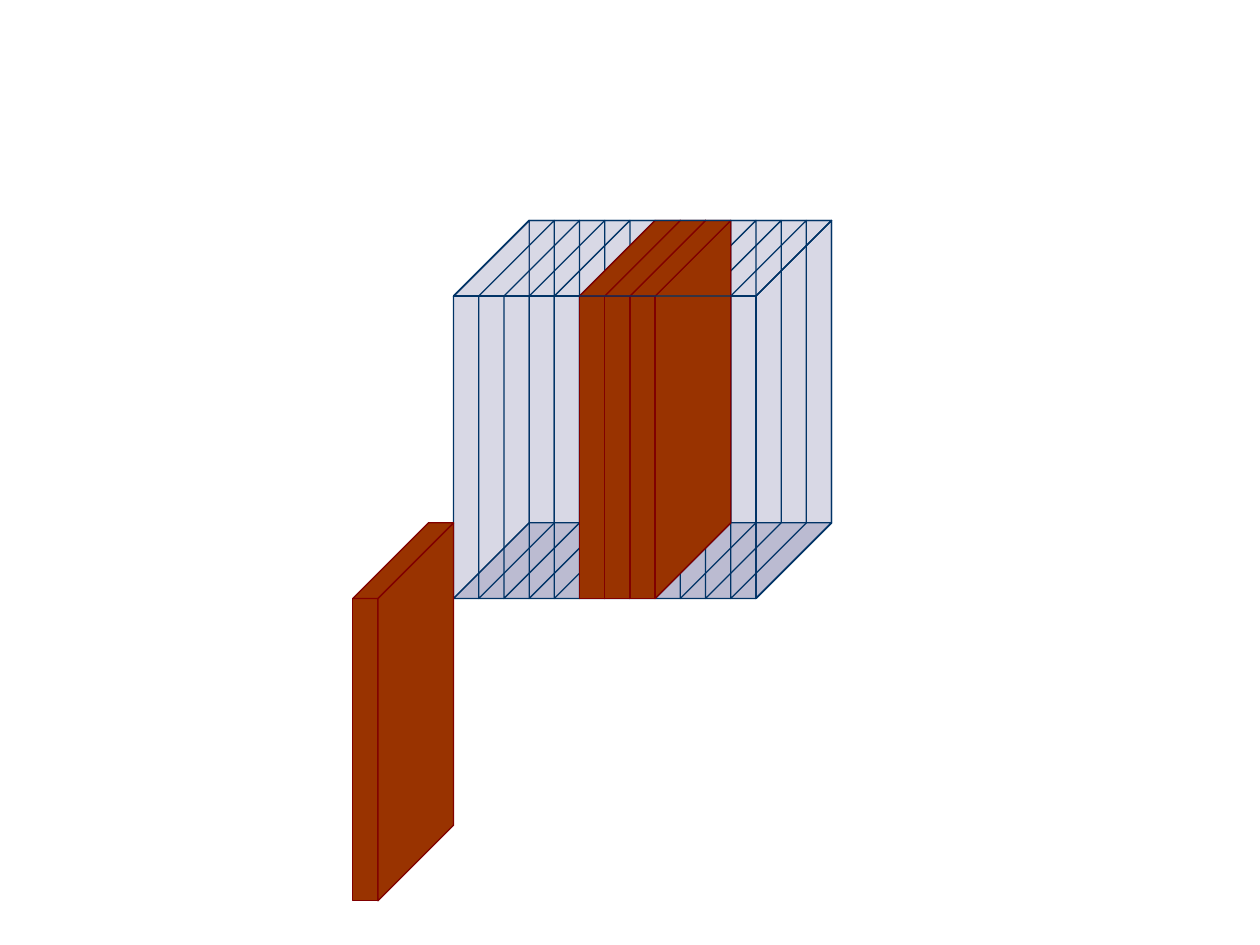
from dataclasses import dataclass

from lxml.etree import SubElement
from pptx import Presentation
from pptx.dml.color import RGBColor as Rgb
from pptx.enum.shapes import MSO_SHAPE as Shape
from pptx.oxml.ns import qn
from pptx.util import Emu, Pt

PX = 9144  # EMU per px, 100 px to the inch


@dataclass(frozen=True)
class Theme:
    glass: Rgb = Rgb.from_string("666699")
    glass_edge: Rgb = Rgb.from_string("003366")
    slab: Rgb = Rgb.from_string("993300")
    slab_edge: Rgb = Rgb.from_string("800000")
    glass_alpha: int = 25
    edge_width: float = 0.75


THEME = Theme()

SIDE = 240    # front edge of the cube
DEPTH = 60    # shift of the back face, right and up
SLICE = 20    # thickness of one slab
CUBE_X, CUBE_Y = 360, 235
FRONT_SLABS = (460, 480, 500)
LOOSE_X, LOOSE_Y = 280, 475


def paint(shape, edge, fill=None, alpha=None):
    """Set line and fill; alpha is the opacity in percent."""
    shape.shadow.inherit = False
    shape.line.color.rgb = edge
    shape.line.width = Pt(THEME.edge_width)
    if fill is None:
        shape.fill.background()
        return
    shape.fill.solid()
    shape.fill.fore_color.rgb = fill
    if alpha is not None:
        color = shape.fill._xPr.find(qn("a:solidFill"))[0]
        SubElement(color, qn("a:alpha"), val=str(alpha * 1000))


def add_polygon(shapes, points, **look):
    start, *rest = points
    builder = shapes.build_freeform(*start, scale=PX)
    builder.add_line_segments(rest, close=True)
    paint(builder.convert_to_shape(), **look)


def add_front(shapes, x, y, width, **look):
    box = (Emu(value * PX) for value in (x, y, width, SIDE))
    paint(shapes.add_shape(Shape.RECTANGLE, *box), **look)


def add_side(shapes, x, y, **look):
    """Upright face that recedes from the front edge at x."""
    back = x + DEPTH
    points = [(x, y + SIDE), (back, y + SIDE - DEPTH), (back, y - DEPTH), (x, y)]
    add_polygon(shapes, points, **look)


def add_level(shapes, x, y, width, **look):
    """Horizontal face that recedes from the front edge at y."""
    back = x + DEPTH
    points = [(x, y), (back, y - DEPTH), (back + width, y - DEPTH), (x + width, y)]
    add_polygon(shapes, points, **look)


def add_glass_cube(shapes):
    wire = dict(edge=THEME.glass_edge)
    glass = dict(wire, fill=THEME.glass, alpha=THEME.glass_alpha)
    right = CUBE_X + SIDE
    add_side(shapes, CUBE_X, CUBE_Y, **wire)
    add_front(shapes, CUBE_X, CUBE_Y, SIDE, **glass)
    add_side(shapes, right, CUBE_Y, **glass)
    for y in (CUBE_Y, CUBE_Y + SIDE):
        add_level(shapes, CUBE_X, y, SIDE, **glass)
    for x in range(CUBE_X + SLICE, right, SLICE):
        add_side(shapes, x, CUBE_Y, **wire)


def add_slabs(shapes, lefts, y):
    """Stack slabs from left to right, then lay their tops over them."""
    look = dict(edge=THEME.slab_edge, fill=THEME.slab)
    for x in lefts:
        add_front(shapes, x, y, SLICE, **look)
        add_side(shapes, x + SLICE, y, **look)
    for x in reversed(lefts):
        add_level(shapes, x, y, SLICE, **look)


def add_cube_outline(shapes):
    """Redraw the near edges of the cube over the slabs."""
    right, back_right = CUBE_X + SIDE, CUBE_X + SIDE + DEPTH
    bottom, back_top = CUBE_Y + SIDE, CUBE_Y - DEPTH
    points = [
        (CUBE_X, CUBE_Y), (right, CUBE_Y), (right, bottom),
        (back_right, bottom - DEPTH), (back_right, back_top),
        (right, CUBE_Y), (back_right, back_top), (CUBE_X + DEPTH, back_top),
    ]
    add_polygon(shapes, points, edge=THEME.glass_edge)


def main():
    deck = Presentation()
    deck.slide_width, deck.slide_height = Emu(1000 * PX), Emu(750 * PX)
    blank_layout = deck.slide_layouts[6]
    shapes = deck.slides.add_slide(blank_layout).shapes
    add_glass_cube(shapes.add_group_shape().shapes)
    add_slabs(shapes, FRONT_SLABS, CUBE_Y)
    add_slabs(shapes, (LOOSE_X,), LOOSE_Y)
    add_cube_outline(shapes)
    deck.save("out.pptx")


if __name__ == "__main__":
    main()
